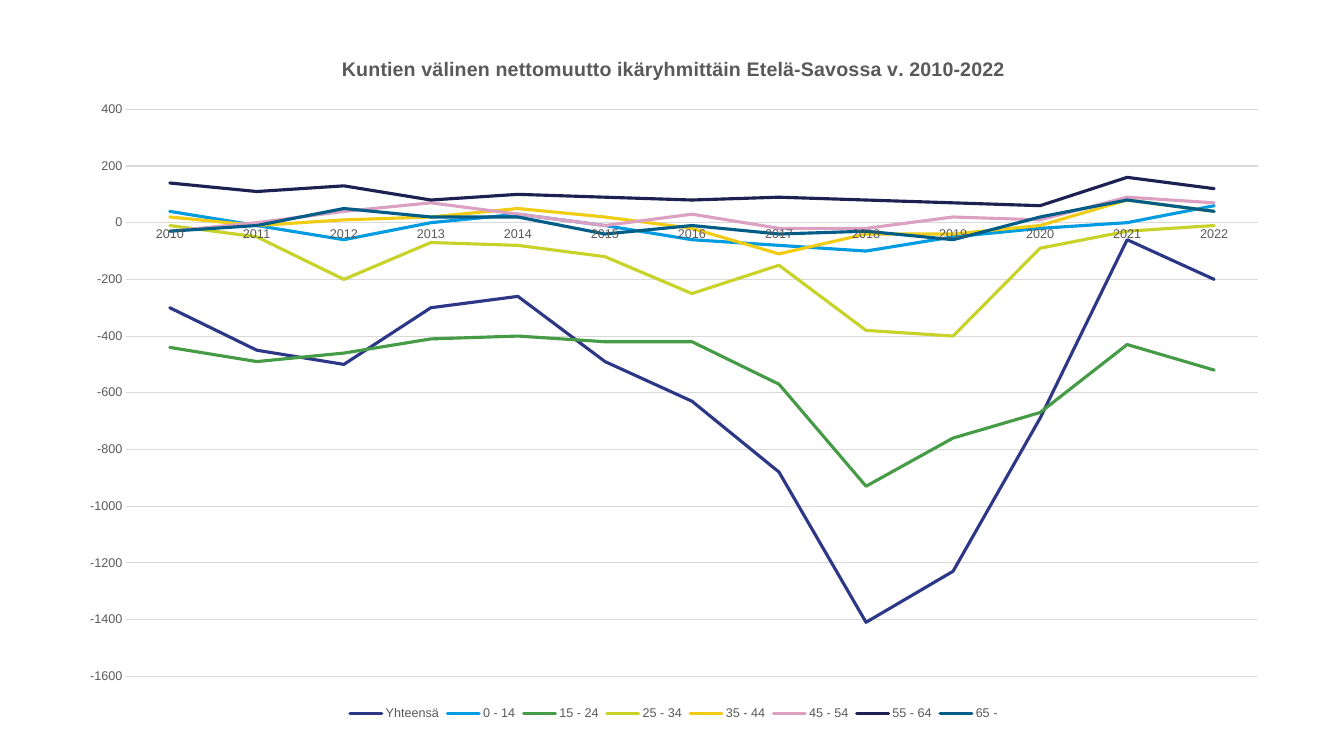
from lxml.etree import SubElement
from pptx import Presentation
from pptx.chart.data import CategoryChartData
from pptx.dml.color import RGBColor
from pptx.enum.chart import XL_CHART_TYPE as Kind
from pptx.enum.chart import XL_LEGEND_POSITION as Place
from pptx.enum.chart import XL_TICK_LABEL_POSITION as Label
from pptx.enum.chart import XL_TICK_MARK as Tick
from pptx.oxml.ns import qn
from pptx.util import Cm, Pt

TITLE = "Kuntien välinen nettomuutto ikäryhmittäin Etelä-Savossa v. 2010-2022"
YEARS = [str(year) for year in range(2010, 2023)]
COLORS = {
    "text": "595959",
    "grid": "D9D9D9",
    "Yhteensä": "2D3787",
    "0 - 14": "009BE1",
    "15 - 24": "469B46",
    "25 - 34": "C8D228",
    "35 - 44": "F0CD14",
    "45 - 54": "DCA0C3",
    "55 - 64": "1B2151",
    "65 -": "005D87",
}
MOVES = {
    "Yhteensä": [-300, -450, -500, -300, -260, -490, -630, -880, -1410, -1230, -690, -60, -200],
    "0 - 14": [40, -10, -60, 0, 30, -10, -60, -80, -100, -50, -20, 0, 60],
    "15 - 24": [-440, -490, -460, -410, -400, -420, -420, -570, -930, -760, -670, -430, -520],
    "25 - 34": [-10, -50, -200, -70, -80, -120, -250, -150, -380, -400, -90, -30, -10],
    "35 - 44": [20, -10, 10, 20, 50, 20, -20, -110, -40, -40, -10, 80, 40],
    "45 - 54": [-30, 0, 40, 70, 30, -10, 30, -20, -20, 20, 10, 90, 70],
    "55 - 64": [140, 110, 130, 80, 100, 90, 80, 90, 80, 70, 60, 160, 120],
    "65 -": [-30, -10, 50, 20, 20, -40, -10, -40, -30, -60, 20, 80, 40],
}


def set_font(font, size, bold=False):
    font.name = "Arial"
    font.size = Pt(size)
    font.bold = bold
    font.color.rgb = RGBColor.from_string(COLORS["text"])


def set_line(line, color, width):
    line.color.rgb = RGBColor.from_string(COLORS[color])
    line.width = Pt(width)


def add_lines(slide):
    data = CategoryChartData(number_format="0")
    data.categories = YEARS
    for name, values in MOVES.items():
        data.add_series(name, values)
    frame = slide.shapes.add_chart(
        Kind.LINE, Cm(1.65), Cm(0.84), Cm(30.66), Cm(17.42), data)
    return frame.chart


def style_title(chart):
    chart.has_title = True
    text = chart.chart_title.text_frame
    text.text = TITLE
    set_font(text.paragraphs[0].runs[0].font, 14, True)
    chart.chart_title.include_in_layout = False


def style_axes(chart):
    years, moves = chart.category_axis, chart.value_axis
    for axis in (years, moves):
        axis.major_tick_mark = axis.minor_tick_mark = Tick.NONE
        axis.tick_label_position = Label.NEXT_TO_AXIS
        set_font(axis.tick_labels.font, 9)
    set_line(years.format.line, "grid", 0.75)
    moves.format.line.fill.background()
    moves.minimum_scale, moves.maximum_scale = -1600, 400
    moves.major_unit = 200
    moves.tick_labels.number_format = "0"
    moves.tick_labels.number_format_is_linked = False
    moves.has_major_gridlines = True
    set_line(moves.major_gridlines.format.line, "grid", 0.75)


def style_series(chart):
    plot = chart.plots[0]
    plot.vary_by_categories = False
    for series in plot.series:
        series.smooth = False
        set_line(series.format.line, series.name, 2.25)
    for line in chart._chartSpace.iterfind(".//" + qn("c:ser") + "/" + qn("c:spPr") + "/" + qn("a:ln")):
        line.set("cap", "rnd")


def style_legend(chart):
    chart.has_legend = True
    chart.legend.position = Place.BOTTOM
    chart.legend.include_in_layout = False
    set_font(chart.legend.font, 9)


def place_plot(chart):
    """Fix the inner plot area as fractions of the chart frame."""
    area = chart._chartSpace.find(".//" + qn("c:plotArea"))
    for old in area.findall(qn("c:layout")):
        area.remove(old)
    layout = SubElement(area, qn("c:layout"))
    area.insert(0, layout)
    manual = SubElement(layout, qn("c:manualLayout"))
    parts = {"layoutTarget": "inner", "xMode": "edge", "yMode": "edge",
             "x": 0.05, "y": 0.11, "w": 0.93, "h": 0.82}
    for tag, value in parts.items():
        SubElement(manual, qn("c:" + tag)).set("val", str(value))


def main():
    deck = Presentation()
    deck.slide_width, deck.slide_height = Cm(33.87), Cm(19.05)
    slide = deck.slides.add_slide(deck.slide_layouts[6])
    chart = add_lines(slide)
    set_font(chart.font, 10)
    for style in (style_title, style_axes, style_series, style_legend, place_plot):
        style(chart)
    deck.save("out.pptx")


if __name__ == "__main__":
    main()
